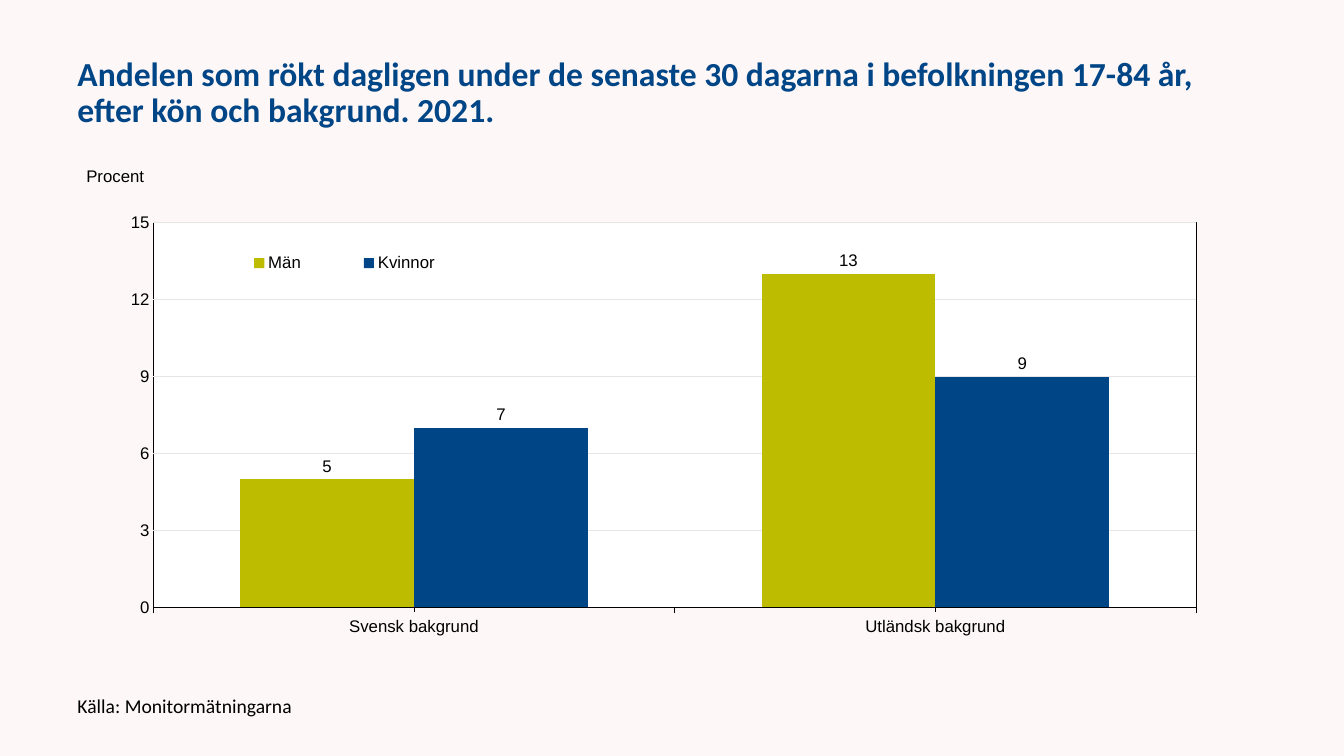
from dataclasses import dataclass

from lxml.etree import fromstring
from pptx import Presentation
from pptx.chart.data import CategoryChartData
from pptx.dml.color import RGBColor as RGB
from pptx.enum.chart import (
    XL_CHART_TYPE as ChartType,
    XL_LABEL_POSITION as LabelPos,
    XL_LEGEND_POSITION as LegendPos,
    XL_TICK_MARK as Tick,
)
from pptx.enum.text import MSO_ANCHOR as Anchor
from pptx.oxml import parse_xml
from pptx.oxml.ns import nsdecls, qn
from pptx.util import Pt


@dataclass(frozen=True)
class Theme:
    background: RGB = RGB.from_string("FEF7F7")
    blue: RGB = RGB.from_string("004687")
    lime: RGB = RGB.from_string("BEBC00")
    grid: RGB = RGB.from_string("E7E6E6")
    black: RGB = RGB.from_string("000000")
    text_font: str = "Calibri"
    chart_font: str = "Arial"
    title_size: int = 24
    source_size: int = 14
    chart_size: int = 12
    line_width: float = 0.75


THEME = Theme()
LEFT, WIDTH = 48.24, 864
NUMBER_FORMAT = "#,##0"


def set_font(font, name, size, color, bold=False):
    font.name, font.size, font.bold = name, Pt(size), bold
    font.color.rgb = color


def set_chart_font(font):
    set_font(font, THEME.chart_font, THEME.chart_size, THEME.black)


def set_line(line, color):
    line.color.rgb = color
    line.width = Pt(THEME.line_width)


def add_text(s, text, top, width, height, size, color, bold=False):
    tf = s.shapes.add_textbox(Pt(LEFT), Pt(top), Pt(width), Pt(height)).text_frame
    tf.word_wrap = True
    tf.vertical_anchor = Anchor.MIDDLE
    p = tf.paragraphs[0]
    p.text = text
    p.line_spacing = 0.9
    set_font(p.font, THEME.text_font, size, color, bold)


def place(element, index, inner=False, **box):
    """Give a chart part a manual layout, in fractions of the chart."""
    for old in element.findall(qn("c:layout")):
        element.remove(old)
    target = '<c:layoutTarget val="inner"/>' if inner else ""
    modes = "".join(f'<c:{k}Mode val="edge"/>' for k in "xy")
    sizes = "".join(f'<c:{k} val="{v}"/>' for k, v in box.items())
    element.insert(index, parse_xml(
        f'<c:layout {nsdecls("c")}><c:manualLayout>{target}{modes}{sizes}'
        "</c:manualLayout></c:layout>"))


def style_plot_area(chart):
    area = chart.plots[0]._element.getparent()
    place(area, 0, inner=True, x=0.071, y=0.125, w=0.862, h=0.723)
    area.append(parse_xml(
        f'<c:spPr {nsdecls("c", "a")}>'
        '<a:solidFill><a:srgbClr val="FFFFFF"/></a:solidFill>'
        f'<a:ln w="{Pt(THEME.line_width)}"><a:solidFill>'
        f'<a:srgbClr val="{THEME.black}"/></a:solidFill></a:ln></c:spPr>'))


def style_axes(chart):
    # Categories, with the unit placed at the top left
    cat = chart.category_axis
    cat.major_tick_mark = cat.minor_tick_mark = Tick.OUTSIDE
    set_line(cat.format.line, THEME.black)
    set_chart_font(cat.tick_labels.font)
    tf = cat.axis_title.text_frame
    tf.text = "Procent"
    set_chart_font(tf.paragraphs[0].font)
    place(cat.axis_title._element, 1, x=0.013, y=0.013)

    # Values
    val = chart.value_axis
    val.minimum_scale, val.maximum_scale, val.major_unit = 0, 15, 3
    val.major_tick_mark = val.minor_tick_mark = Tick.NONE
    val.format.line.fill.background()
    val.has_major_gridlines = True
    set_line(val.major_gridlines.format.line, THEME.grid)
    val.tick_labels.number_format = NUMBER_FORMAT
    val.tick_labels.number_format_is_linked = False
    set_chart_font(val.tick_labels.font)


def style_series(chart, colors):
    plot = chart.plots[0]
    plot.gap_width, plot.overlap = 100, 0
    plot.vary_by_categories = False
    for series, color in zip(plot.series, colors):
        series.format.fill.solid()
        series.format.fill.fore_color.rgb = color
        labels = series.data_labels
        labels.show_value = True
        labels.position = LabelPos.OUTSIDE_END
        labels.number_format = NUMBER_FORMAT
        labels.number_format_is_linked = False
        set_chart_font(labels.font)


def style_legend(chart):
    chart.has_legend = True
    legend = chart.legend
    legend.position = LegendPos.BOTTOM
    legend.include_in_layout = False
    set_chart_font(legend.font)
    place(legend._element, 1, x=0.107, y=0.166, w=0.244, h=0.07)


def add_smoking_chart(s, top, height):
    data = CategoryChartData(number_format=NUMBER_FORMAT)
    data.categories = ["Svensk bakgrund", "Utländsk bakgrund"]
    data.add_series("Män", (5, 13))
    data.add_series("Kvinnor", (7, 9))
    chart = s.shapes.add_chart(ChartType.COLUMN_CLUSTERED, Pt(LEFT), Pt(top),
                               Pt(WIDTH), Pt(height), data).chart
    chart.has_title = False
    set_chart_font(chart.font)
    style_axes(chart)
    style_series(chart, (THEME.lime, THEME.blue))
    style_legend(chart)
    style_plot_area(chart)


def main():
    prs = Presentation()
    prs.slide_width, prs.slide_height = Pt(960), Pt(540)
    s = prs.slides.add_slide(prs.slide_layouts[6])
    s.background.fill.solid()
    s.background.fill.fore_color.rgb = THEME.background

    # Title
    add_text(s, "Andelen som rökt dagligen under de senaste 30 dagarna i "
                "befolkningen 17-84 år, efter kön och bakgrund. 2021.",
             21.6, WIDTH, 90, THEME.title_size, THEME.blue, bold=True)

    # Chart
    add_smoking_chart(s, 111.6, 380.16)

    # Source
    add_text(s, "Källa: Monitormätningarna", 491.76, 432, 26.64,
             THEME.source_size, THEME.black)

    prs.save("out.pptx")


if __name__ == "__main__":
    main()
